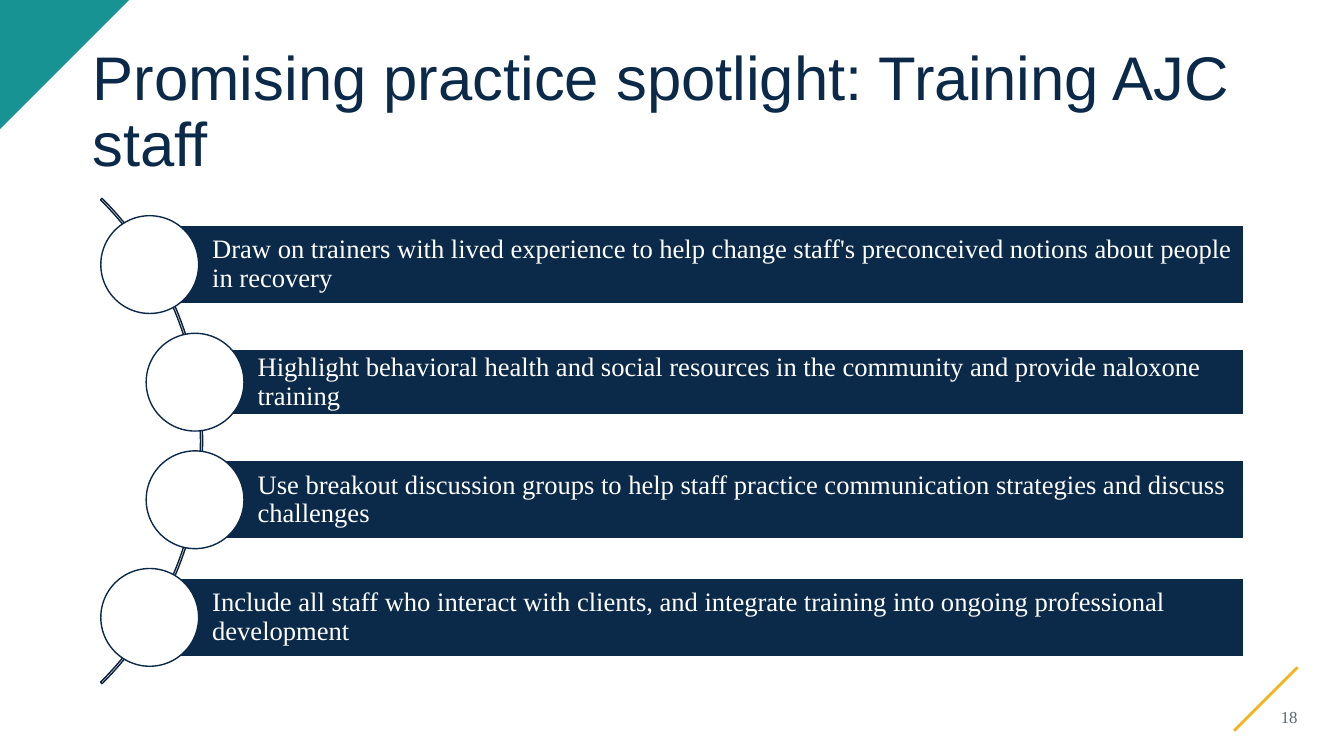
from dataclasses import dataclass

from lxml import etree
from pptx import Presentation
from pptx.dml.color import RGBColor
from pptx.enum.shapes import MSO_CONNECTOR, MSO_SHAPE
from pptx.enum.text import MSO_ANCHOR, PP_ALIGN
from pptx.oxml.ns import qn
from pptx.util import Inches, Pt

STRAIGHT = MSO_CONNECTOR.STRAIGHT
ARC, BAR, CIRCLE = MSO_SHAPE.BLOCK_ARC, MSO_SHAPE.RECTANGLE, MSO_SHAPE.OVAL
MIDDLE = MSO_ANCHOR.MIDDLE
LEFT, RIGHT = PP_ALIGN.LEFT, PP_ALIGN.RIGHT


@dataclass(frozen=True)
class Theme:
    """Colours, fonts and type sizes of the deck."""
    navy: str = "0B2949"
    arc: str = "09213A"
    teal: str = "189394"
    gold: str = "F1B51C"
    white: str = "FFFFFF"
    grey: str = "5B6771"
    heading_font: str = "Arial"
    body_font: str = "Times New Roman"
    title_size: int = 44
    body_size: int = 19
    number_size: int = 12


THEME = Theme()
TITLE = "Promising practice spotlight: Training AJC staff"
PRACTICES = [
    ("Draw on trainers with lived experience to help change staff's "
     "preconceived notions about people in recovery", 0, 0.78),
    ("Highlight behavioral health and social resources in the community "
     "and provide naloxone training", 0.45, 0.65),
    ("Use breakout discussion groups to help staff practice communication "
     "strategies and discuss challenges", 0.45, 0.78),
    ("Include all staff who interact with clients, and integrate training "
     "into ongoing professional development", 0, 0.78),
]


def style_shape(shape, fill=None, line=None):
    """Set fill and outline colours and drop the shadow."""
    shape.shadow.inherit = False
    if fill:
        shape.fill.solid()
        shape.fill.fore_color.rgb = RGBColor.from_string(fill)
    else:
        shape.fill.background()
    if line:
        shape.line.color.rgb = RGBColor.from_string(line)
        shape.line.width = Pt(1)
    else:
        shape.line.fill.background()


def write_text(shape, text, font, size, color, align=LEFT, spacing=1.0, insets=(0, 0, 0, 0)):
    """Write one wrapped, vertically centred paragraph."""
    frame = shape.text_frame
    frame.word_wrap = True
    frame.vertical_anchor = MIDDLE
    (frame.margin_left, frame.margin_top,
     frame.margin_right, frame.margin_bottom) = map(Inches, insets)
    para = frame.paragraphs[0]
    para.alignment = align
    para.line_spacing = spacing
    span = para.add_run()
    span.text = text
    span.font.name = font
    span.font.size = Pt(size)
    span.font.color.rgb = RGBColor.from_string(color)


def add_corner(page, left, top, side):
    """Draw the teal triangle in the page corner."""
    outline = page.shapes.build_freeform(Inches(left), Inches(top))
    outline.add_line_segments(
        [(Inches(left + side), Inches(top)), (Inches(left), Inches(top + side))], close=True)
    style_shape(outline.convert_to_shape(), THEME.teal)


def add_title(page, left, top, width, height):
    """Place the page heading."""
    box = page.shapes.add_textbox(Inches(left), Inches(top), Inches(width), Inches(height))
    write_text(box, TITLE, THEME.heading_font, THEME.title_size, THEME.navy, spacing=0.9)


def add_practice(page, text, center_x, center_y, right, height, diameter):
    """Draw one bar with its text and the circle over its left end."""
    bar = page.shapes.add_shape(BAR, Inches(center_x), Inches(center_y - height / 2),
                                Inches(right - center_x), Inches(height))
    style_shape(bar, THEME.navy, THEME.white)
    write_text(bar, text, THEME.body_font, THEME.body_size, THEME.white,
               spacing=0.9, insets=(0.62, 0.05, 0.05, 0.05))
    circle = page.shapes.add_shape(CIRCLE, Inches(center_x - diameter / 2),
                                   Inches(center_y - diameter / 2),
                                   Inches(diameter), Inches(diameter))
    style_shape(circle, THEME.white, THEME.navy)


def add_practices(page, left, top, width, height):
    """Draw the curved list: an arc and evenly spaced practices along it."""
    diameter, arc_size = 0.97, 6.81
    middle = top + height / 2
    arc = page.shapes.add_shape(ARC, Inches(left - 5.8), Inches(middle - arc_size / 2),
                                Inches(arc_size), Inches(arc_size))
    for index, value in enumerate((189, 27, 0.00317)):
        arc.adjustments[index] = value
    style_shape(arc, line=THEME.arc)
    pitch = (height - diameter) / (len(PRACTICES) - 1)
    for index, (text, shift, bar_height) in enumerate(PRACTICES):
        add_practice(page, text, left + diameter / 2 + shift,
                     top + diameter / 2 + index * pitch, left + width, bar_height, diameter)


def add_footer(page, left, top, width, height):
    """Draw the gold slanted line and the page number."""
    line = page.shapes.add_connector(STRAIGHT, Inches(left), Inches(top + 0.63),
                                     Inches(left + width), Inches(top))
    line.line.color.rgb = RGBColor.from_string(THEME.gold)
    line.line.width = Pt(2)
    etree.SubElement(line._element.spPr, qn("a:effectLst"))
    box = page.shapes.add_textbox(Inches(left + 0.06), Inches(top + 0.12),
                                  Inches(width - 0.06), Inches(height - 0.12))
    write_text(box, "18", THEME.body_font, THEME.number_size, THEME.grey, RIGHT)


def main():
    """Build the deck and save it."""
    deck = Presentation()
    deck.slide_width, deck.slide_height = Inches(13.33), Inches(7.5)
    page = deck.slides.add_slide(deck.slide_layouts[6])
    add_corner(page, 0, 0, 1.28)
    add_title(page, 0.92, 0.4, 11.5, 1.45)
    add_practices(page, 1, 2.14, 11.34, 4.47)
    add_footer(page, 12.24, 6.62, 0.63, 0.87)
    deck.save("out.pptx")


if __name__ == "__main__":
    main()
